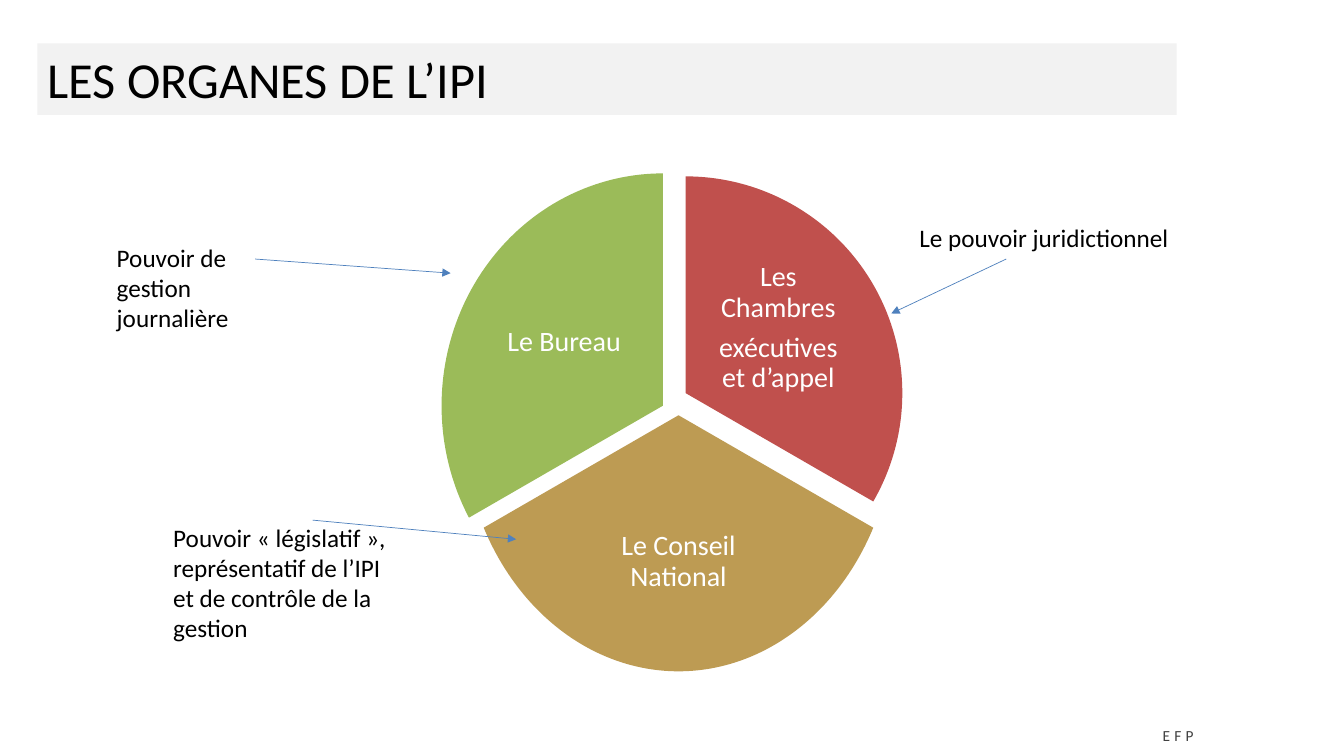
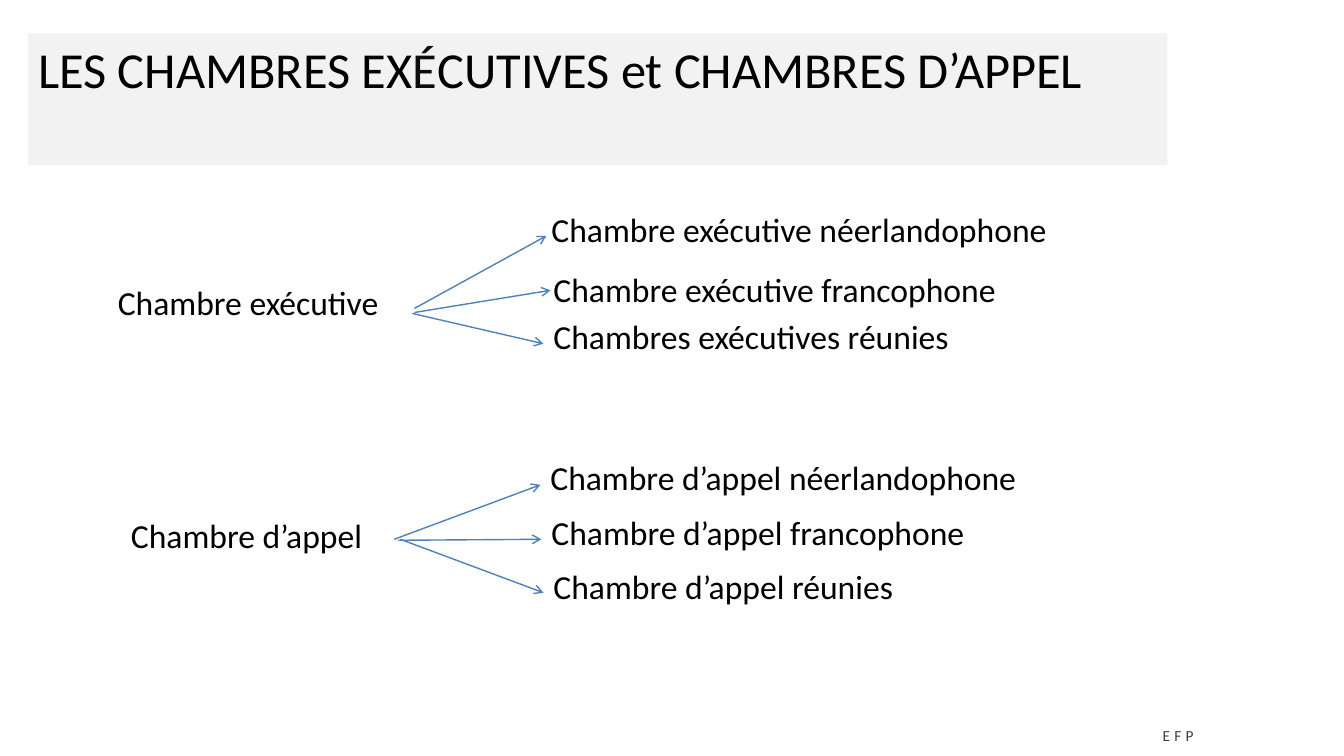
from lxml import etree
from pptx import Presentation
from pptx.dml.color import RGBColor
from pptx.enum.shapes import MSO_CONNECTOR, MSO_SHAPE
from pptx.enum.text import MSO_ANCHOR, MSO_AUTO_SIZE, PP_ALIGN
from pptx.oxml.ns import qn
from pptx.util import Inches, Pt

STRAIGHT = MSO_CONNECTOR.STRAIGHT
RECTANGLE, PIE = MSO_SHAPE.RECTANGLE, MSO_SHAPE.PIE
TOP, MIDDLE = MSO_ANCHOR.TOP, MSO_ANCHOR.MIDDLE
LEFT, CENTER = PP_ALIGN.LEFT, PP_ALIGN.CENTER
GROW, FIXED = MSO_AUTO_SIZE.SHAPE_TO_FIT_TEXT, MSO_AUTO_SIZE.NONE

FONT = "Calibri"
COLORS = {
    "text": "000000",
    "soft_text": "0D0D0D",
    "footer": "404040",
    "white": "FFFFFF",
    "band": "F2F2F2",
    "arrow": "4F81BD",
    "red": "C0504D",
    "gold": "BD9B53",
    "green": "9BBB59",
}


def rgb(name):
    return RGBColor.from_string(COLORS[name])


def inches(values):
    return [Inches(value) for value in values]


def write(shape, *paragraphs, size=18, color="text", align=LEFT, anchor=TOP,
          insets=(0.1, 0.05), wrap=True, fit=FIXED, line_spacing=None,
          before=None, after=None, tracking=None):
    """Fill a shape; a paragraph is a string or a list of (text, color) runs."""
    frame = shape.text_frame
    frame.word_wrap = wrap
    frame.auto_size = fit
    frame.vertical_anchor = anchor
    frame.margin_left = frame.margin_right = Inches(insets[0])
    frame.margin_top = frame.margin_bottom = Inches(insets[1])
    for index, content in enumerate(paragraphs):
        paragraph = frame.add_paragraph() if index else frame.paragraphs[0]
        paragraph.alignment = align
        if line_spacing:
            paragraph.line_spacing = line_spacing
        if before is not None:
            paragraph.space_before = Pt(before)
        if after is not None:
            paragraph.space_after = Pt(after)
        runs = [(content, color)] if isinstance(content, str) else content
        for text, run_color in runs:
            run = paragraph.add_run()
            run.text = text
            run.font.name = FONT
            run.font.size = Pt(size)
            run.font.color.rgb = rgb(run_color)
            if tracking:
                run.font._element.set("spc", str(tracking * 100))


def add_text(shapes, box, *paragraphs, **style):
    write(shapes.add_textbox(*inches(box)), *paragraphs, **style)


def add_filled(shapes, kind, box, color):
    shape = shapes.add_shape(kind, *inches(box))
    shape.shadow.inherit = False
    shape.fill.solid()
    shape.fill.fore_color.rgb = rgb(color)
    shape.line.fill.background()
    return shape


def add_arrow(slide, start, end, width, head):
    arrow = slide.shapes.add_connector(STRAIGHT, *inches((*start, *end)))
    arrow.line.color.rgb = rgb("arrow")
    arrow.line.width = Pt(width)
    etree.SubElement(arrow.line._get_or_add_ln(), qn("a:tailEnd"), type=head)
    etree.SubElement(arrow._element.spPr, qn("a:effectLst"))


def add_base_slide(deck, title, left, top, height):
    """Blank slide with the footer and the title band."""
    slide = deck.slides.add_slide(deck.slide_layouts[6])
    add_text(slide.shapes, (11.37, 7.15, 0.63, 0.29), "EFP", size=11,
             color="footer", align=CENTER, wrap=False, fit=GROW, tracking=3)
    band = add_filled(slide.shapes, RECTANGLE, (left, top, 11.3, height), "band")
    write(band, title, size=36)
    return slide


def add_sector(shapes, box, angles, color, label_box, *label):
    """Pie sector between two clockwise angles in degrees, with its label."""
    sector = add_filled(shapes, PIE, box, color)
    for index, angle in enumerate(angles):
        sector.adjustments[index] = angle * 0.6
    add_text(shapes, label_box, *label, size=20, color="white", align=CENTER,
             anchor=MIDDLE, insets=(0.03, 0.03), line_spacing=0.9, after=7)


def add_organs_slide(deck):
    slide = add_base_slide(deck, "LES ORGANES DE L’IPI", 0.37, 0.43, 0.71)
    organs = slide.shapes.add_group_shape().shapes
    add_sector(organs, (4.65, 1.75, 4.3, 4.3), (270, 30), "red",
               (6.99, 2.54, 1.46, 1.43), "Les Chambres", "exécutives et d’appel")
    add_sector(organs, (4.58, 1.58, 4.3, 5.08), (30, 150), "gold",
               (5.76, 4.79, 1.94, 1.57), "Le Conseil National")
    add_sector(organs, (4.38, 1.72, 4.39, 4.61), (150, 270), "green",
               (4.85, 2.63, 1.49, 1.54), "Le Bureau")
    powers = [
        ("Pouvoir de gestion journalière", (1.06, 2.35, 1.96, 1.01),
         (2.53, 2.57), (4.47, 2.71)),
        ("Pouvoir « législatif », représentatif de l’IPI et de contrôle "
         "de la gestion", (1.62, 5.13, 2.36, 1.31), (3.1, 5.16), (5.12, 5.35)),
        ("Le pouvoir juridictionnel", (9.02, 2.16, 2.98, 0.4),
         (9.98, 2.57), (8.84, 3.11)),
    ]
    for power, box, _, _ in powers:
        add_text(slide.shapes, box, power, fit=GROW)
    for _, _, start, end in powers:
        add_arrow(slide, start, end, 0.5, "triangle")


def add_chamber(slide, left, top, name, branches):
    """Chamber name with arrows to its branches, placed from its left top."""
    style = {"size": 24, "line_spacing": 0.9, "before": 10}
    add_text(slide.shapes, (left, top, 3.15, 0.56), name, **style)
    for branch, (dx, dy), start, end in branches:
        add_text(slide.shapes, (left + dx, top + dy, 6.01, 0.56), branch, **style)
        add_arrow(slide, (left + start[0], top + start[1]),
                  (left + end[0], top + end[1]), 1, "arrow")


def add_chambers_slide(deck):
    title = [("LES CHAMBRES EX", "text"), ("É", "soft_text"),
             ("CUTIVES et CHAMBRES D’APPEL", "text")]
    slide = add_base_slide(deck, title, 0.28, 0.33, 1.31)
    add_chamber(slide, 1.07, 2.79, "Chambre exécutive", [
        ("Chambre exécutive néerlandophone", (4.3, -0.72),
         (3.04, 0.27), (4.35, -0.45)),
        ("Chambre exécutive francophone", (4.32, -0.13),
         (3.04, 0.31), (4.39, 0.09)),
        ("Chambres exécutives réunies", (4.32, 0.34),
         (3.02, 0.32), (4.32, 0.62)),
    ])
    add_chamber(slide, 1.2, 5.1, "Chambre d’appel", [
        ("Chambre d’appel néerlandophone", (4.16, -0.57),
         (2.71, 0.25), (4.16, -0.29)),
        ("Chambre d’appel francophone", (4.17, -0.03),
         (2.75, 0.26), (4.17, 0.25)),
        ("Chambre d’appel réunies", (4.19, 0.51),
         (2.77, 0.25), (4.19, 0.78)),
    ])


def main():
    deck = Presentation()
    deck.slide_width, deck.slide_height = inches((13.33, 7.5))
    add_organs_slide(deck)
    add_chambers_slide(deck)
    deck.save("out.pptx")


if __name__ == "__main__":
    main()
